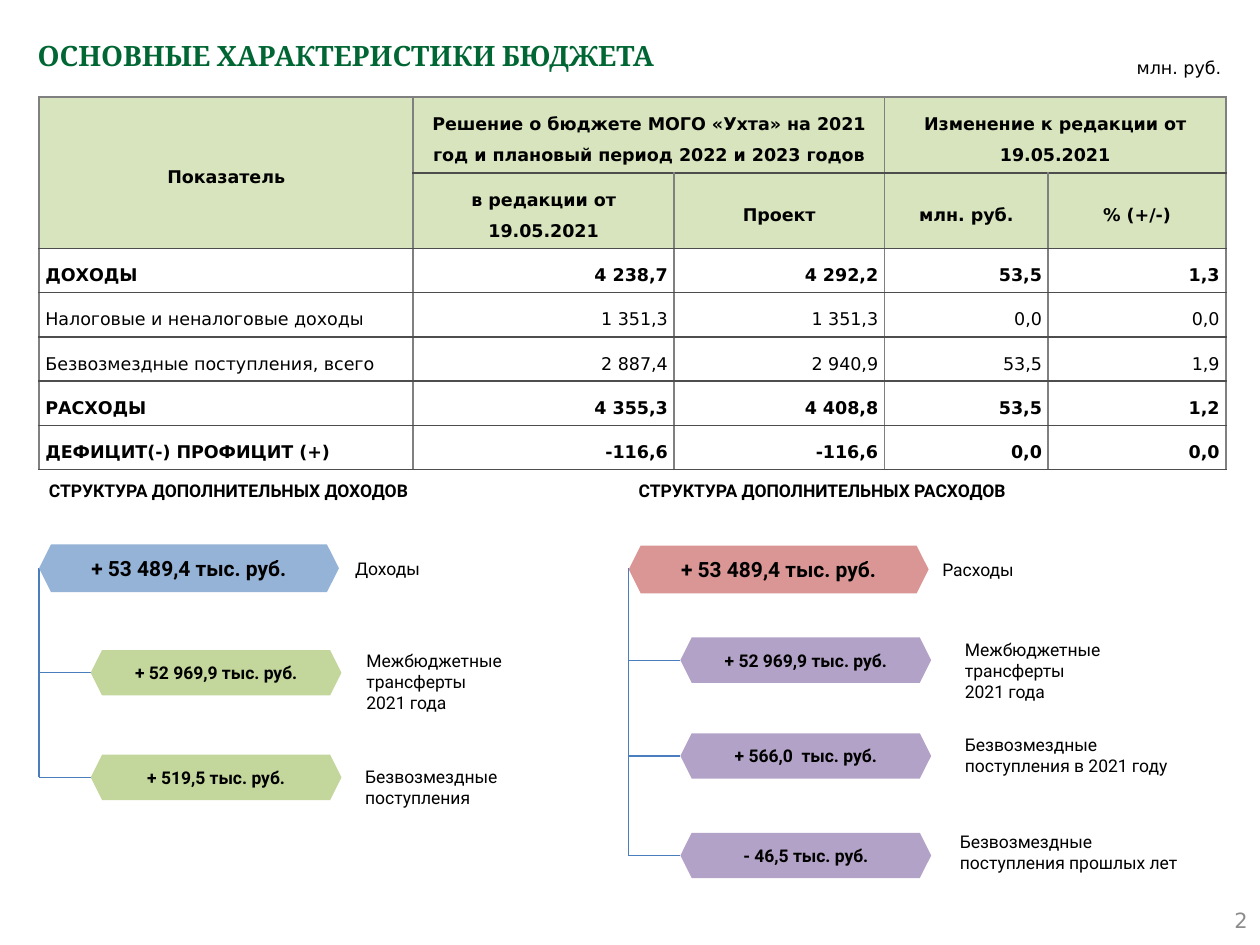
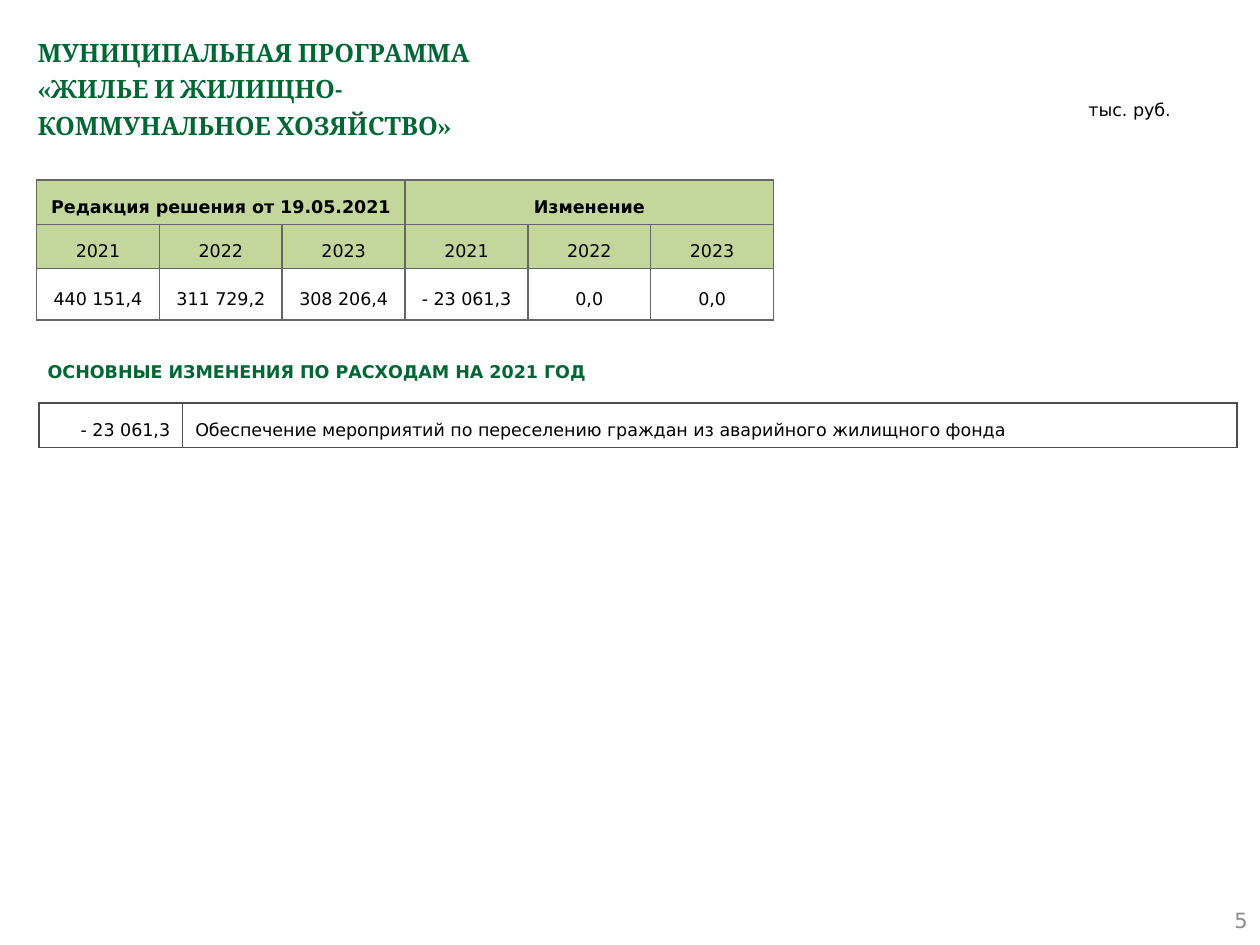
from dataclasses import dataclass
from typing import Any, NamedTuple

from lxml import etree
from pptx import Presentation
from pptx.dml.color import RGBColor
from pptx.enum.shapes import MSO_CONNECTOR, MSO_SHAPE
from pptx.enum.text import MSO_ANCHOR, PP_ALIGN
from pptx.oxml.ns import qn
from pptx.util import Inches, Pt

LEFT, MID, RIGHT = PP_ALIGN.LEFT, PP_ALIGN.CENTER, PP_ALIGN.RIGHT
TOP, CENTRE = MSO_ANCHOR.TOP, MSO_ANCHOR.MIDDLE
HEX, LINE = MSO_SHAPE.HEXAGON, MSO_CONNECTOR.STRAIGHT

COLOURS = {
    "ink": "000000", "title": "006633", "page": "8C8C8C", "line": "4B7EBC",
    "pale": "D7E4BD", "green": "C3D69B", "blue": "95B3D7",
    "red": "D99694", "violet": "B3A2C7",
    "grey": "808080", "dark": "4D4D4D", "mid": "666666",
}
SANS, ROBOTO = "DejaVu Sans", "Roboto"


class Box(NamedTuple):
    left: float
    top: float
    width: float
    height: float

    def emu(self) -> list[int]:
        return [Inches(side) for side in self]


class Span(NamedTuple):
    row: int
    col: int
    last_row: int
    last_col: int


@dataclass(frozen=True)
class Font:
    size: float = 10
    name: str = SANS
    colour: str = "ink"
    bold: bool = False


@dataclass(frozen=True)
class Grid:
    box: Box
    cols: list[float]
    rows: list[float]
    cells: list[list[str]]
    aligns: list[Any]
    side: str
    rule: str
    top: str
    fill: str = "pale"
    heads: int = 0
    bold: tuple[int, ...] = ()
    spans: tuple[Span, ...] = ()
    inset: float = 0.05


class Item(NamedTuple):
    """One amount of a tree, with the place of its label."""
    top: float
    amount: str
    label: str
    label_left: float
    label_top: float


@dataclass(frozen=True)
class Tree:
    left: float
    head: str
    root: str
    branch: str
    items: list[Item]


def rgb(name: str) -> RGBColor:
    return RGBColor.from_string(COLOURS[name])


def write(frame: Any, text: str, font: Font, align: Any = LEFT,
          spacing: float = 1.0) -> None:
    frame.text = text
    for para in frame.paragraphs:
        para.alignment, para.line_spacing = align, spacing
        look = {"size": Pt(font.size), "name": font.name, "bold": font.bold}
        for run in para.runs:
            for key, value in look.items():
                setattr(run.font, key, value)
            run.font.color.rgb = rgb(font.colour)


def add_text(slide: Any, box: Box, text: str, font: Font, align: Any = LEFT,
             anchor: Any = TOP, spacing: float = 1.0) -> None:
    frame = slide.shapes.add_textbox(*box.emu()).text_frame
    frame.word_wrap, frame.vertical_anchor = True, anchor
    write(frame, text, font, align, spacing)


def add_page(deck: Any, title: str, size: float, number: int) -> Any:
    """Add a slide with the shared title and page number."""
    slide = deck.slides.add_slide(deck.slide_layouts[6])
    add_text(slide, Box(0.2, 0.2, 9.61, 0.79), title,
             Font(size, "Cambria", "title", True), spacing=1.2)
    add_text(slide, Box(7.67, 7.1, 2.33, 0.4), str(number),
             Font(12, colour="page"), RIGHT, CENTRE)
    return slide


def add_edges(cell: Any, edges: dict[str, str]) -> None:
    props = cell._tc.get_or_add_tcPr()
    for place, (tag, colour) in enumerate(edges.items()):
        edge = etree.Element(qn(f"a:{tag}"), w=str(Pt(1)))
        fill = etree.SubElement(edge, qn("a:solidFill"))
        etree.SubElement(fill, qn("a:srgbClr"), val=COLOURS[colour])
        props.insert(place, edge)


def add_grid(slide: Any, grid: Grid) -> None:
    table = slide.shapes.add_table(
        len(grid.rows), len(grid.cols), *grid.box.emu()).table
    for col, width in zip(table.columns, grid.cols):
        col.width = Inches(width)
    for row, height in zip(table.rows, grid.rows):
        row.height = Inches(height)
    table.first_row = table.horz_banding = False
    pad = Inches(grid.inset)
    form = {"margin_left": pad, "margin_right": pad,
            "margin_top": Inches(0.05), "margin_bottom": Inches(0.05),
            "vertical_anchor": CENTRE}
    for r, texts in enumerate(grid.cells):
        for c, text in enumerate(texts):
            cell, head = table.cell(r, c), r < grid.heads
            for key, value in form.items():
                setattr(cell, key, value)
            write(cell.text_frame, text, Font(bold=r in grid.bold),
                  MID if head else grid.aligns[c], 1.5)
            if head:
                cell.fill.solid()
                cell.fill.fore_color.rgb = rgb(grid.fill)
            else:
                cell.fill.background()
            add_edges(cell, {"lnL": grid.side, "lnR": grid.side,
                             "lnT": grid.rule if r else grid.top,
                             "lnB": grid.rule})
    for span in grid.spans:
        table.cell(span.row, span.col).merge(
            table.cell(span.last_row, span.last_col))


def add_hex(slide: Any, box: Box, fill: str, text: str, size: float) -> None:
    shape = slide.shapes.add_shape(HEX, *box.emu())
    shape.shadow.inherit = False
    shape.fill.solid()
    shape.fill.fore_color.rgb = rgb(fill)
    shape.line.fill.background()
    frame = shape.text_frame
    form = {"margin_left": 0, "margin_right": 0, "margin_top": 0,
            "margin_bottom": 0, "word_wrap": False,
            "vertical_anchor": CENTRE}
    for key, value in form.items():
        setattr(frame, key, value)
    write(frame, text, Font(size, ROBOTO, bold=True), MID)


def add_line(slide: Any, x1: float, y1: float, x2: float, y2: float) -> None:
    line = slide.shapes.add_connector(
        LINE, Inches(x1), Inches(y1), Inches(x2), Inches(y2))
    line.line.color.rgb = rgb("line")
    line.line.width = Pt(0.75)
    etree.SubElement(line._element.spPr, qn("a:effectLst"))


def add_tree(slide: Any, tree: Tree) -> None:
    add_text(slide, Box(tree.left - 0.02, 3.76, 3.4, 0.27), tree.head,
             Font(name=ROBOTO, bold=True))
    add_line(slide, tree.left, 4.51, tree.left, tree.items[-1].top + 0.18)
    for place, item in enumerate(tree.items):
        if place:
            left, mid = tree.left + 0.41, item.top + 0.18
            add_line(slide, tree.left, mid, left, mid)
            box, fill, size = Box(left, item.top, 1.99, 0.36), tree.branch, 10
        else:
            box, fill, size = Box(tree.left, item.top, 2.38, 0.38), tree.root, 12
        add_hex(slide, box, fill, item.amount, size)
        add_text(slide, Box(item.label_left, item.label_top, 2.05, 0.44),
                 item.label, Font(name=ROBOTO))


BUDGET = Grid(
    Box(0.31, 0.77, 9.42, 2.88), [2.97, 2.07, 1.67, 1.3, 1.41],
    [0.59] * 2 + [0.34] * 5,
    [
        ["Показатель",
         "Решение о бюджете МОГО «Ухта» на 2021 год и плановый период "
         "2022 и 2023 годов", "", "Изменение к редакции от 19.05.2021", ""],
        ["", "в редакции от 19.05.2021", "Проект", "млн. руб.", "% (+/-)"],
        ["ДОХОДЫ", "4 238,7", "4 292,2", "53,5", "1,3"],
        ["Налоговые и неналоговые доходы", "1 351,3", "1 351,3", "0,0", "0,0"],
        ["Безвозмездные поступления, всего", "2 887,4", "2 940,9", "53,5",
         "1,9"],
        ["РАСХОДЫ", "4 355,3", "4 408,8", "53,5", "1,2"],
        ["ДЕФИЦИТ(-) ПРОФИЦИТ (+)", "-116,6", "-116,6", "0,0", "0,0"],
    ],
    [LEFT] + [RIGHT] * 4, "grey", "dark", "grey", heads=2,
    bold=(0, 1, 2, 5, 6),
    spans=(Span(0, 0, 1, 0), Span(0, 1, 0, 2), Span(0, 3, 0, 4)))

YEARS = ["2021", "2022", "2023"]
HOUSING = Grid(
    Box(0.29, 1.43, 5.85, 1.11), [0.975] * 6, [0.35, 0.35, 0.41],
    [
        ["Редакция решения от 19.05.2021", "", "", "Изменение", "", ""],
        YEARS * 2,
        ["440 151,4", "311 729,2", "308 206,4", "- 23 061,3", "0,0", "0,0"],
    ],
    [MID] * 6, "mid", "mid", "mid", fill="green", heads=2, bold=(0,),
    spans=(Span(0, 0, 0, 2), Span(0, 3, 0, 5)))

CHANGE = Grid(
    Box(0.31, 3.2, 9.51, 0.35), [1.14, 8.37], [0.35],
    [["- 23 061,3", "Обеспечение мероприятий по переселению граждан "
      "из аварийного жилищного фонда"]],
    [RIGHT, LEFT], "dark", "dark", "dark", inset=0.1)

TOTAL = "+ 53 489,4 тыс. руб."
GRANT = "+ 52 969,9 тыс. руб."
GRANT_LABEL = "Межбюджетные трансферты\n2021 года"
TREES = [
    Tree(0.31, "СТРУКТУРА ДОПОЛНИТЕЛЬНЫХ ДОХОДОВ", "blue", "green", [
        Item(4.32, TOTAL, "Доходы", 2.72, 4.38),
        Item(5.16, GRANT, GRANT_LABEL, 2.81, 5.11),
        Item(5.99, "+ 519,5 тыс. руб.", "Безвозмездные поступления",
             2.8, 6.03),
    ]),
    Tree(4.99, "СТРУКТУРА ДОПОЛНИТЕЛЬНЫХ РАСХОДОВ", "red", "violet", [
        Item(4.33, TOTAL, "Расходы", 7.38, 4.39),
        Item(5.06, GRANT, GRANT_LABEL, 7.56, 5.02),
        Item(5.82, "+ 566,0  тыс. руб.",
             "Безвозмездные поступления в 2021 году", 7.56, 5.78),
        Item(6.61, "- 46,5 тыс. руб.",
             "Безвозмездные поступления прошлых лет", 7.52, 6.55),
    ]),
]


def main() -> None:
    deck = Presentation()
    deck.slide_width, deck.slide_height = Inches(10), Inches(7.5)

    slide = add_page(deck, "ОСНОВНЫЕ ХАРАКТЕРИСТИКИ БЮДЖЕТА", 16, 2)
    add_grid(slide, BUDGET)
    add_text(slide, Box(8.55, 0.43, 1.24, 0.21), "млн. руб.", Font(),
             RIGHT, CENTRE)
    for tree in TREES:
        add_tree(slide, tree)

    slide = add_page(deck, "МУНИЦИПАЛЬНАЯ ПРОГРАММА \v«ЖИЛЬЕ И ЖИЛИЩНО-\v"
                     "КОММУНАЛЬНОЕ ХОЗЯЙСТВО»", 14.4, 5)
    add_text(slide, Box(8.54, 0.7, 1.01, 0.3), "тыс. руб.", Font(),
             spacing=1.2)
    add_grid(slide, HOUSING)
    add_text(slide, Box(0.28, 2.73, 5.32, 0.43),
             "ОСНОВНЫЕ ИЗМЕНЕНИЯ ПО РАСХОДАМ НА 2021 ГОД",
             Font(colour="title", bold=True), anchor=CENTRE)
    add_grid(slide, CHANGE)
    deck.save("out.pptx")


if __name__ == "__main__":
    main()
